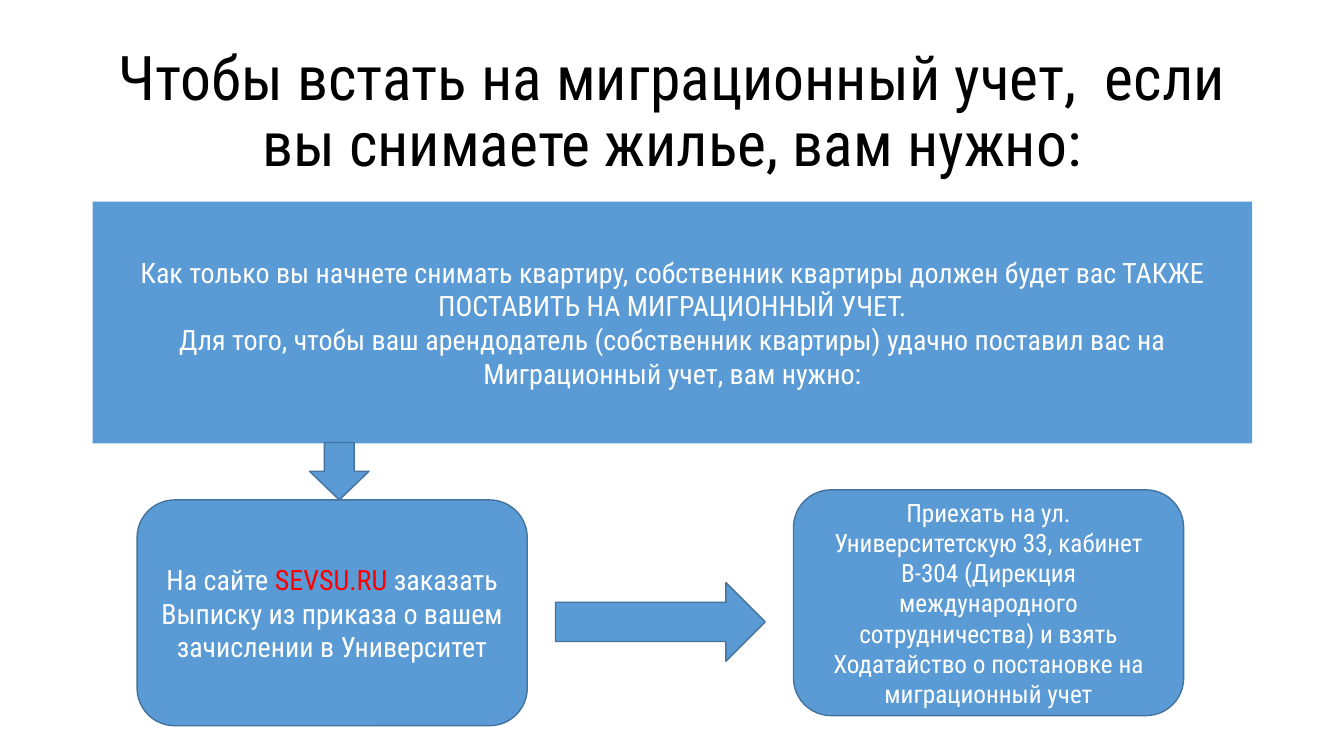
from dataclasses import dataclass
from typing import Optional

from pptx import Presentation
from pptx.dml.color import RGBColor
from pptx.enum.shapes import MSO_SHAPE
from pptx.enum.text import MSO_ANCHOR, PP_ALIGN
from pptx.util import Inches, Pt

RECT = MSO_SHAPE.RECTANGLE
ROUNDED = MSO_SHAPE.ROUNDED_RECTANGLE
DOWN_ARROW = MSO_SHAPE.DOWN_ARROW
RIGHT_ARROW = MSO_SHAPE.RIGHT_ARROW
CENTER = PP_ALIGN.CENTER
MIDDLE = MSO_ANCHOR.MIDDLE

BLACK = RGBColor(0x00, 0x00, 0x00)
WHITE = RGBColor(0xFF, 0xFF, 0xFF)
RED = RGBColor(0xFF, 0x00, 0x00)
BLUE = RGBColor(0x5B, 0x9B, 0xD5)
DARK_BLUE = RGBColor(0x43, 0x73, 0x9E)
FONT = "Roboto Condensed"


@dataclass(frozen=True)
class Span:
    text: str
    color: RGBColor = WHITE


@dataclass(frozen=True)
class Block:
    kind: MSO_SHAPE
    left: float
    top: float
    width: float
    height: float
    paragraphs: tuple[tuple[Span, ...], ...] = ()
    size: int = 20
    outline: Optional[RGBColor] = DARK_BLUE


TITLE = Span("Чтобы встать на миграционный учет,  если вы снимаете жилье, вам нужно:", BLACK)

BLOCKS = (
    Block(RECT, 0.92, 2, 11.5, 2.4, (
        (Span("Как только вы начнете снимать квартиру, собственник квартиры "
              "должен будет вас ТАКЖЕ ПОСТАВИТЬ НА МИГРАЦИОННЫЙ УЧЕТ."),),
        (Span("Для того, чтобы ваш арендодатель (собственник квартиры) удачно "
              "поставил вас на Миграционный учет, вам нужно:"),),
    ), outline=None),
    Block(ROUNDED, 1.36, 4.96, 3.87, 2.24, (
        (Span("На сайте "), Span("SEVSU.RU ", RED),
         Span("заказать Выписку из приказа о вашем зачислении в Университет")),
    )),
    Block(ROUNDED, 7.87, 4.86, 3.87, 2.24, (
        (Span("Приехать на ул. Университетскую 33, кабинет В-304 (Дирекция "
              "международного сотрудничества) и взять Ходатайство о постановке "
              "на миграционный учет"),),
    ), size=18),
    Block(DOWN_ARROW, 3.07, 4.39, 0.59, 0.57),
    Block(RIGHT_ARROW, 5.51, 5.78, 2.08, 0.78),
)


def add_spans(para, spans: tuple[Span, ...], size: int) -> None:
    para.alignment = CENTER
    for span in spans:
        run = para.add_run()
        run.text = span.text
        run.font.name = FONT
        run.font.size = Pt(size)
        run.font.color.rgb = span.color


def add_block(page, block: Block) -> None:
    shape = page.shapes.add_shape(
        block.kind, Inches(block.left), Inches(block.top),
        Inches(block.width), Inches(block.height))
    shape.shadow.inherit = False
    shape.fill.solid()
    shape.fill.fore_color.rgb = BLUE
    if block.outline is None:
        shape.line.fill.background()
    else:
        shape.line.color.rgb = block.outline
        shape.line.width = Pt(1)
    frame = shape.text_frame
    frame.word_wrap = True
    frame.vertical_anchor = MIDDLE
    for index, spans in enumerate(block.paragraphs):
        para = frame.add_paragraph() if index else frame.paragraphs[0]
        add_spans(para, spans, block.size)


def add_title(page) -> None:
    title = page.shapes.title
    title.left, title.top = Inches(0.92), Inches(0.4)
    title.width, title.height = Inches(11.5), Inches(1.45)
    frame = title.text_frame
    frame.word_wrap = True
    frame.vertical_anchor = MIDDLE
    para = frame.paragraphs[0]
    para.line_spacing = 0.9
    add_spans(para, (TITLE,), 44)


def main() -> None:
    deck = Presentation()
    deck.slide_width, deck.slide_height = Inches(13.33), Inches(7.5)
    page = deck.slides.add_slide(deck.slide_layouts[5])  # title only
    add_title(page)
    # Explanation, the two steps and the arrows between them
    for block in BLOCKS:
        add_block(page, block)
    deck.save("out.pptx")


if __name__ == "__main__":
    main()
